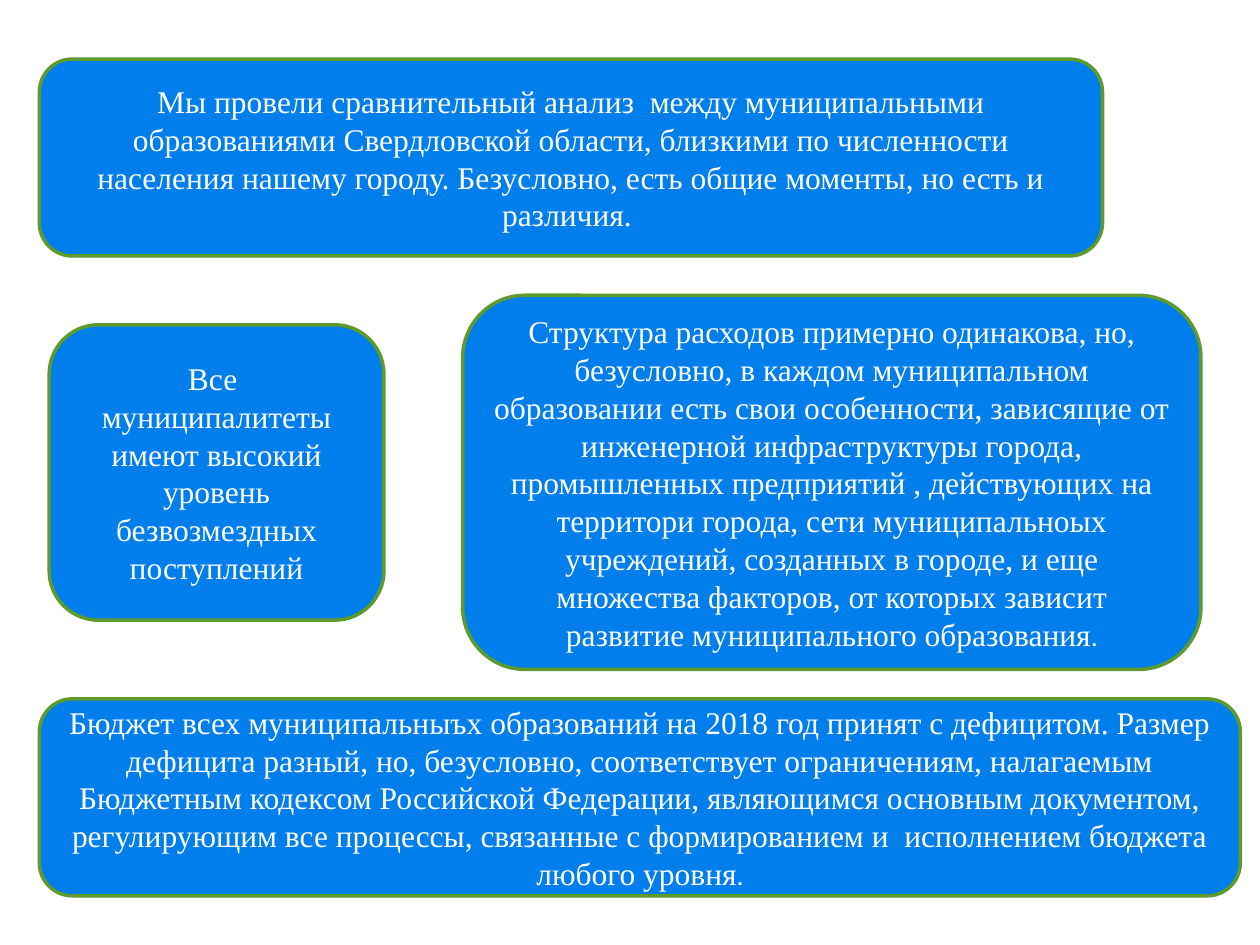
from dataclasses import dataclass

from pptx import Presentation
from pptx.dml.color import RGBColor
from pptx.enum.shapes import MSO_SHAPE
from pptx.enum.text import MSO_ANCHOR, PP_ALIGN
from pptx.util import Inches, Pt

ROUND = MSO_SHAPE.ROUNDED_RECTANGLE
MIDDLE = MSO_ANCHOR.MIDDLE
CENTER = PP_ALIGN.CENTER
COLS = 128
WIDTH, HEIGHT = Inches(10), Inches(7.5)
UNIT = WIDTH / COLS


@dataclass(frozen=True)
class Theme:
    """Colours, fonts and sizes of the slide."""
    fill: RGBColor = RGBColor(0x00, 0x7E, 0xEB)
    line: RGBColor = RGBColor(0x5E, 0x9B, 0x2C)
    text: RGBColor = RGBColor(0xFF, 0xFF, 0xFF)
    main: str = "Times New Roman"
    stop: str = "Cabin"
    size: Pt = Pt(18)
    edge: Pt = Pt(2)


THEME = Theme()

INTRO = (
    "Мы провели сравнительный анализ  между муниципальными образованиями "
    "Свердловской области, близкими по численности населения нашему городу. "
    "Безусловно, есть общие моменты, но есть и различия. "
)
GRANTS = "Все  муниципалитеты имеют высокий уровень безвозмездных поступлений"
COSTS = (
    "Структура расходов примерно одинакова, но, безусловно, в каждом "
    "муниципальном образовании есть свои особенности, зависящие от инженерной "
    "инфраструктуры города, промышленных предприятий , действующих на "
    "территори города, сети муниципальноых учреждений, созданных в городе, и "
    "еще множества факторов, от которых зависит развитие муниципального "
    "образования"
)
BUDGET = (
    "Бюджет всех муниципальныъх образований на 2018 год принят с дефицитом. "
    "Размер дефицита разный, но, безусловно, соответствует ограничениям, "
    "налагаемым Бюджетным кодексом Российской Федерации, являющимся основным "
    "документом, регулирующим все процессы, связанные с формированием и  "
    "исполнением бюджета любого уровня"
)

PANELS = (
    ((4, 6, 108, 20), INTRO, ""),
    ((5, 33, 34, 30), GRANTS, ""),
    ((47, 30, 75, 38), COSTS, "."),
    ((4, 71, 122, 20), BUDGET, "."),
)


def add_run(para, text, font):
    """Add one run of text in the given font."""
    run = para.add_run()
    run.text = text
    run.font.name = font
    run.font.size = THEME.size
    run.font.color.rgb = THEME.text


def add_panel(slide, box, text, stop):
    """Place a rounded panel with centred text in a box of grid units."""
    panel = slide.shapes.add_shape(ROUND, *(round(n * UNIT) for n in box))
    panel.shadow.inherit = False
    panel.fill.solid()
    panel.fill.fore_color.rgb = THEME.fill
    panel.line.color.rgb = THEME.line
    panel.line.width = THEME.edge
    frame = panel.text_frame
    frame.word_wrap = True
    frame.vertical_anchor = MIDDLE
    para = frame.paragraphs[0]
    para.alignment = CENTER
    add_run(para, text, THEME.main)
    if stop:
        add_run(para, stop, THEME.stop)


def main():
    """Build the slide and save it."""
    deck = Presentation()
    deck.slide_width, deck.slide_height = WIDTH, HEIGHT
    slide = deck.slides.add_slide(deck.slide_layouts[6])
    for box, text, stop in PANELS:
        add_panel(slide, box, text, stop)
    deck.save("out.pptx")


if __name__ == "__main__":
    main()
